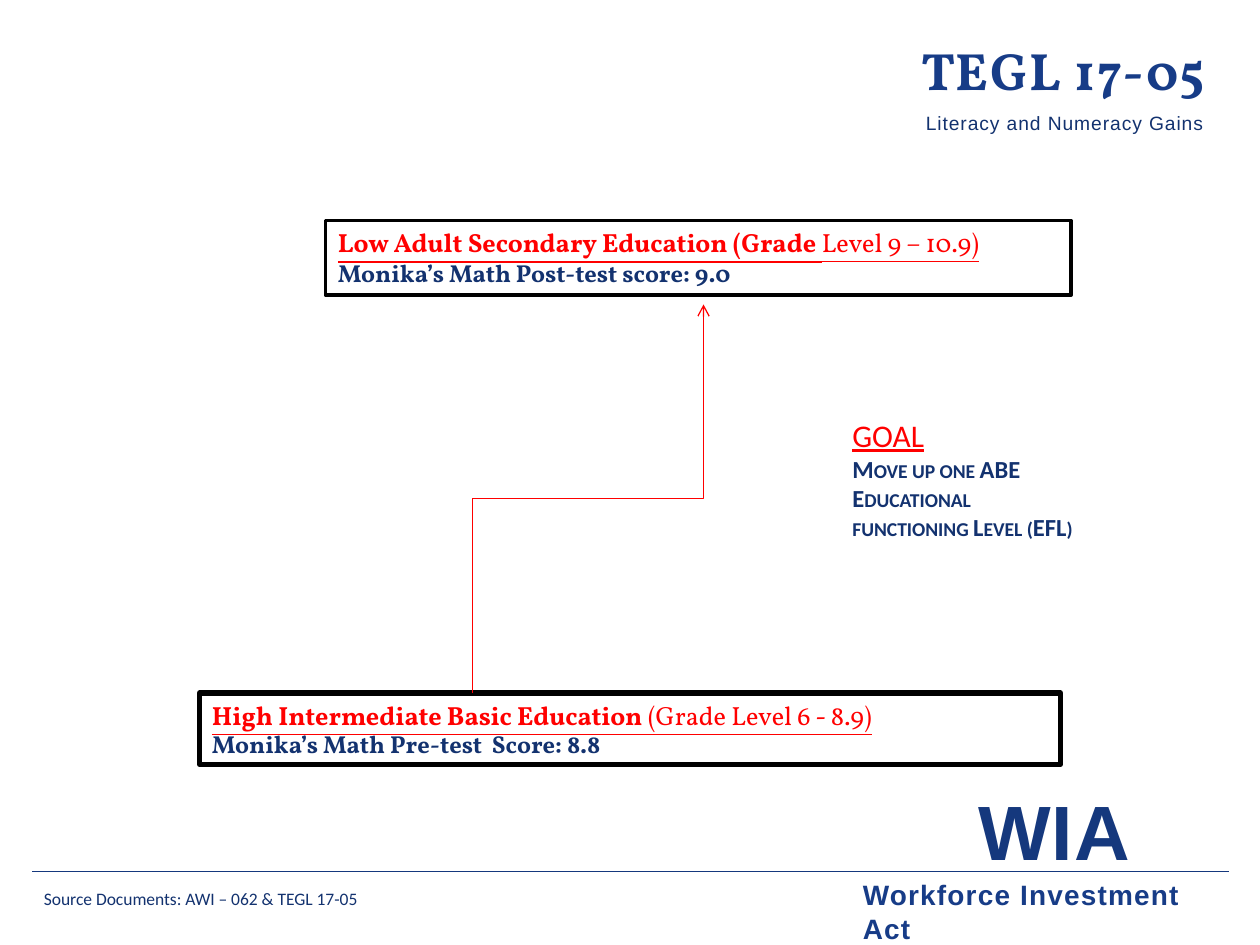
from lxml.etree import SubElement
from pptx import Presentation
from pptx.dml.color import RGBColor
from pptx.enum.shapes import MSO_CONNECTOR as Link, MSO_SHAPE as Shape
from pptx.enum.text import MSO_ANCHOR as Anchor, MSO_AUTO_SIZE as AutoSize, PP_ALIGN as Align
from pptx.oxml.ns import qn
from pptx.util import Emu, Pt

PX = 7620  # EMU per px, 120 px to the inch
COLORS = {
    "white": "FFFFFF",
    "black": "000000",
    "red": "FF0000",
    "text": "13326F",
    "brand": "15387D",
    "title": "173C87",
}


def px(*lengths):
    return [Emu(length * PX) for length in lengths]


def color(name):
    return RGBColor.from_string(COLORS[name])


class SlideBuilder:
    def __init__(self, slide):
        self.slide = slide

    def set_text(self, shape, paragraphs, align=Align.LEFT, anchor=Anchor.TOP, grow=True):
        """Each paragraph is a list of (text, style) runs."""
        frame = shape.text_frame
        frame.word_wrap = True
        frame.vertical_anchor = anchor
        frame.auto_size = AutoSize.SHAPE_TO_FIT_TEXT if grow else AutoSize.NONE
        for index, runs in enumerate(paragraphs):
            paragraph = frame.add_paragraph() if index else frame.paragraphs[0]
            paragraph.alignment = align
            for text, style in runs:
                run = paragraph.add_run()
                run.text = text
                self.style(run, **style)

    def style(self, run, font, size, ink, bold=False, underline=False, spacing=0, small_caps=False):
        run.font.name = font
        run.font.size = Pt(size)
        run.font.bold = bold
        run.font.underline = underline
        run.font.color.rgb = color(ink)
        properties = run.font._element
        if spacing:
            properties.set("spc", str(round(spacing * 100)))
        if small_caps:
            properties.set("cap", "small")

    def text(self, box, paragraphs):
        self.set_text(self.slide.shapes.add_textbox(*px(*box)), paragraphs)

    def rectangle(self, box, paragraphs, border, weight, fill=None, **layout):
        shape = self.slide.shapes.add_shape(Shape.RECTANGLE, *px(*box))
        shape.shadow.inherit = False
        if fill:
            shape.fill.solid()
            shape.fill.fore_color.rgb = color(fill)
        else:
            shape.fill.background()
        shape.line.color.rgb = color(border)
        shape.line.width = Pt(weight)
        self.set_text(shape, paragraphs, **layout)

    def line(self, start, end, ink, kind=Link.STRAIGHT):
        connector = self.slide.shapes.add_connector(kind, *px(*start, *end))
        connector.line.color.rgb = color(ink)
        connector.line.width = Pt(0.75)
        SubElement(connector._element.spPr, qn("a:effectLst"))
        return connector

    def rising_arrow(self, start, end, ink):
        """Elbow arrow that leaves upwards: a level elbow turned by 270 degrees."""
        middle_x, middle_y = (start[0] + end[0]) // 2, (start[1] + end[1]) // 2
        half_rise, half_run = (start[1] - end[1]) // 2, (end[0] - start[0]) // 2
        connector = self.line(
            (middle_x - half_rise, middle_y - half_run),
            (middle_x + half_rise, middle_y + half_run),
            ink, Link.ELBOW)
        connector._element.spPr.find(qn("a:xfrm")).set("rot", str(270 * 60000))
        SubElement(connector.get_or_add_ln(), qn("a:tailEnd"), type="arrow")


def main():
    deck = Presentation()
    deck.slide_width, deck.slide_height = px(1200, 900)
    page = SlideBuilder(deck.slides.add_slide(deck.slide_layouts[6]))

    level = dict(font="Vollkorn", size=15, ink="red", bold=True, underline=True)
    grade = dict(level, bold=False)
    score = dict(font="Vollkorn", size=14, ink="text", bold=True)

    # Subtitle and footer
    page.text((870, 100, 310, 35), [[("Literacy and Numeracy Gains",
              dict(font="Arial", size=11, ink="text", spacing=0.5))]])
    page.text((920, 740, 190, 101), [[("WIA",
              dict(font="Arial", size=44, ink="brand", bold=True, spacing=0.5))]])
    page.line((1170, 830), (30, 830), "brand")
    page.text((30, 840, 510, 32), [[("Source Documents: AWI – 062 & TEGL 17-05",
              dict(font="Calibri", size=10, ink="text"))]])
    page.text((810, 830, 365, 44), [[("Workforce Investment Act",
              dict(font="Arial", size=16, ink="title", bold=True, spacing=0.7))]])

    # Title
    page.rectangle((790, 30, 370, 73), [[("TEGL 17-05",
                   dict(font="Vollkorn", size=30, ink="title", bold=True, spacing=1))]],
                   "white", 0.75, fill="white", align=Align.RIGHT)

    # Pre-test and post-test levels
    page.rectangle((190, 660, 820, 68), [[("Monika’s Math Pre-test  Score: 8.8", score)]],
                   "black", 3, anchor=Anchor.BOTTOM, grow=False)
    page.rectangle((310, 210, 710, 71), [
        [("Low Adult Secondary Education (Grade ", level), ("Level 9 – 10.9)", grade)],
        [("Monika’s Math Post-test score: 9.0", score)],
    ], "black", 2.25)

    # Goal
    page.text((800, 390, 250, 133), [
        [("GOAL", dict(font="Calibri", size=18, ink="red", underline=True))],
        [("Move up one ABE Educational functioning Level (EFL)",
          dict(font="Calibri", size=14, ink="text", bold=True, small_caps=True))],
    ])

    # Step up from the pre-test level to the post-test level
    page.rising_arrow((450, 660), (670, 290), "red")
    page.text((190, 660, 698, 42), [
        [("High Intermediate Basic Education ", level), ("(Grade Level 6 - 8.9)", grade)],
    ])

    deck.save("out.pptx")


if __name__ == "__main__":
    main()
